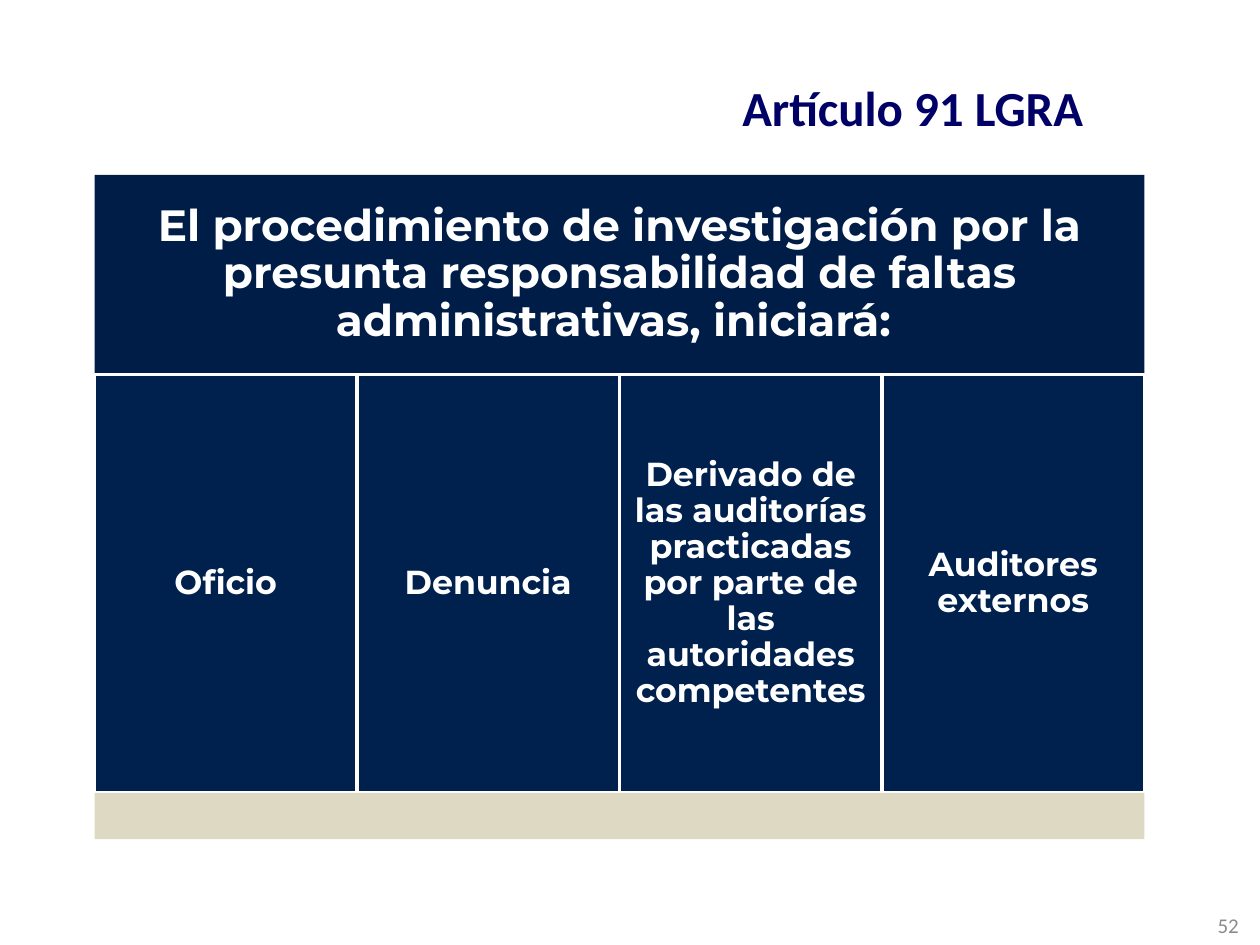
from dataclasses import dataclass

from pptx import Presentation
from pptx.dml.color import RGBColor as Rgb
from pptx.enum.shapes import MSO_SHAPE as Shape
from pptx.enum.text import MSO_ANCHOR as Anchor, PP_ALIGN as Align
from pptx.util import Pt


@dataclass(frozen=True)
class Theme:
    title: str = "000066"
    head: str = "001D47"
    cell: str = "00204E"
    base: str = "DDD9C3"
    white: str = "FFFFFF"
    grey: str = "8C8C8C"
    sans: str = "Calibri"
    bold: str = "Montserrat"
    title_size: int = 28
    head_size: int = 25
    cell_size: int = 19
    page_size: int = 12


THEME = Theme()
LEFT, TOP, WIDTH = 54, 100, 600
HEAD_H, CELL_H, BASE_H = 114, 239, 26.5
HEAD = "El procedimiento de investigación por la presunta responsabilidad de faltas administrativas, iniciará: "
CAUSES = [
    "Oficio",
    "Denuncia",
    "Derivado de las auditorías practicadas por parte de las autoridades competentes",
    "Auditores externos",
]


def write(shape, text, size, color, face, align, bold=True):
    frame = shape.text_frame
    frame.word_wrap = True
    frame.vertical_anchor = Anchor.MIDDLE
    frame.text = text
    para = frame.paragraphs[0]
    para.alignment = align
    font = para.runs[0].font
    font.name, font.size, font.bold = face, Pt(size), bold
    font.color.rgb = Rgb.from_string(color)


def place(shape, left, top, width, height):
    shape.left, shape.top = Pt(left), Pt(top)
    shape.width, shape.height = Pt(width), Pt(height)


def add_title(slide, text):
    title = slide.shapes.title
    place(title, 417, 40.5, 218, 41)
    write(title, text, THEME.title_size, THEME.title, THEME.sans, Align.LEFT)


def add_band(group, box, fill, edge=False):
    """Add a filled rectangle, with a white edge if asked for."""
    band = group.shapes.add_shape(Shape.RECTANGLE, *map(Pt, box))
    band.shadow.inherit = False
    band.fill.solid()
    band.fill.fore_color.rgb = Rgb.from_string(fill)
    if edge:
        band.line.color.rgb = Rgb.from_string(THEME.white)
        band.line.width = Pt(2)
    else:
        band.line.fill.background()
    return band


def label(band, text, size, inset):
    frame = band.text_frame
    frame.margin_left = frame.margin_right = Pt(inset)
    frame.margin_top = frame.margin_bottom = Pt(inset)
    write(band, text, size, THEME.white, THEME.bold, Align.CENTER)
    frame.paragraphs[0].line_spacing = 0.9


def add_chart(slide):
    """Add the heading band, one cell per cause and the base band."""
    group = slide.shapes.add_group_shape()
    head = add_band(group, (LEFT, TOP, WIDTH, HEAD_H), THEME.head)
    label(head, HEAD, THEME.head_size, 7.5)
    top, step = TOP + HEAD_H, WIDTH / len(CAUSES)
    for i, cause in enumerate(CAUSES):
        box = (LEFT + i * step, top, step, CELL_H)
        label(add_band(group, box, THEME.cell, True), cause, THEME.cell_size, 5.7)
    add_band(group, (LEFT, top + CELL_H, WIDTH, BASE_H), THEME.base)


def add_page(slide, text):
    page = slide.shapes.add_textbox(Pt(642), Pt(517.5), Pt(73), Pt(22.5))
    write(page, text, THEME.page_size, THEME.grey, THEME.sans, Align.RIGHT, False)


def main():
    deck = Presentation()
    deck.slide_width, deck.slide_height = Pt(720), Pt(540)
    slide = deck.slides.add_slide(deck.slide_layouts[5])
    add_page(slide, "52")
    add_chart(slide)
    add_title(slide, "Artículo 91 LGRA")
    deck.save("out.pptx")


if __name__ == "__main__":
    main()
